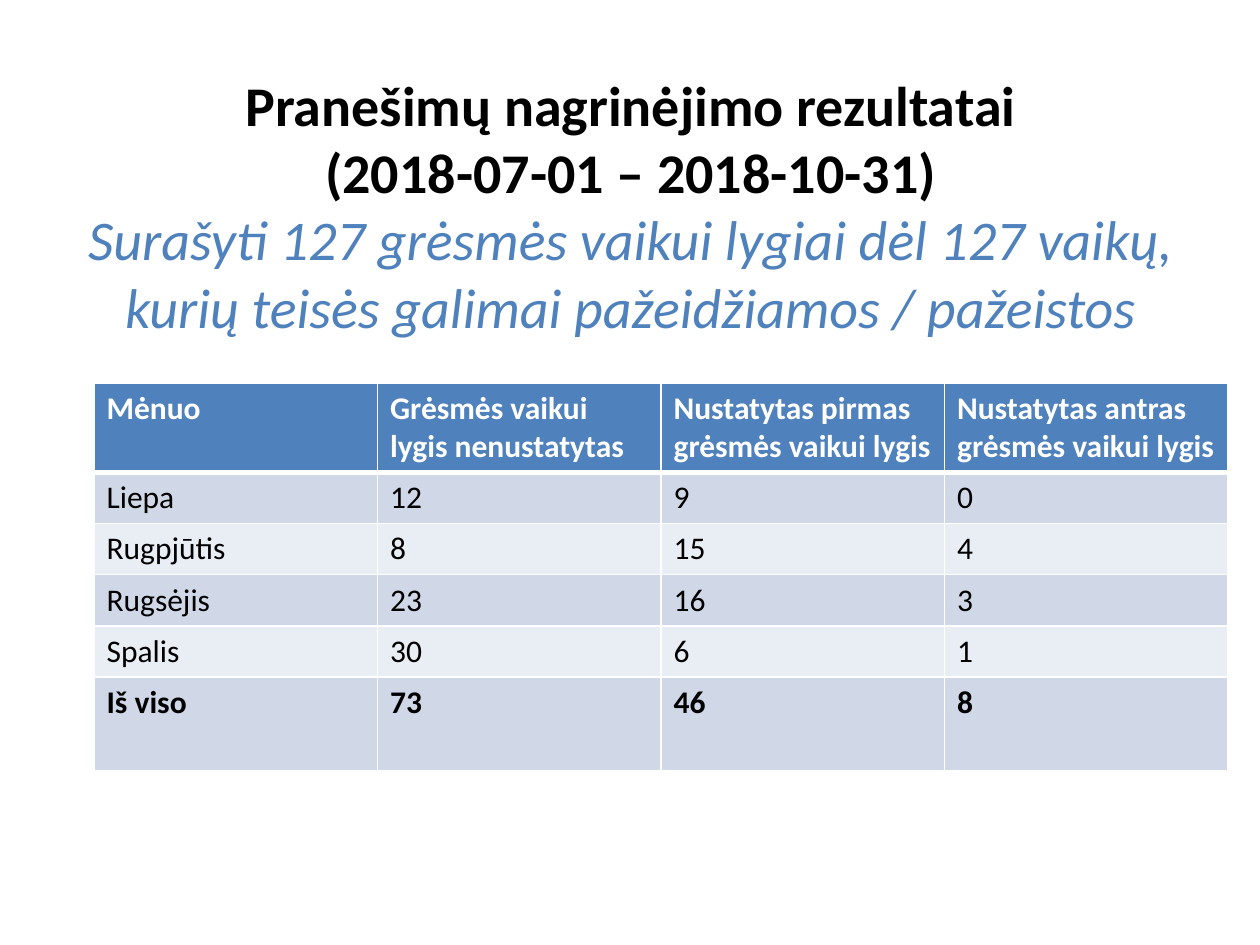
from pptx import Presentation
from pptx.dml.color import RGBColor
from pptx.enum.text import MSO_ANCHOR, MSO_AUTO_SIZE, PP_ALIGN
from pptx.oxml.ns import qn
from pptx.util import Pt
from lxml.etree import SubElement

EMU_PER_PX = 914400 / 126
FONT = "Calibri"
COLORS = {
    "accent": "4F81BD",
    "band_dark": "D0D8E8",
    "band_light": "E9EDF4",
    "text": "000000",
    "white": "FFFFFF",
}
HEADERS = [
    "Mėnuo",
    "Grėsmės vaikui lygis nenustatytas",
    "Nustatytas pirmas grėsmės vaikui lygis",
    "Nustatytas antras grėsmės vaikui lygis",
]
MONTHS = [
    ("Liepa", 12, 9, 0),
    ("Rugpjūtis", 8, 15, 4),
    ("Rugsėjis", 23, 16, 3),
    ("Spalis", 30, 6, 1),
]
TOTALS = ("Iš viso", 73, 46, 8)


def px(length):
    return round(length * EMU_PER_PX)


def color(name):
    return RGBColor.from_string(COLORS[name])


def add_text(paragraph, text, size=18, fill="text", bold=False, italic=False):
    run = paragraph.add_run()
    run.text = text
    font = run.font
    font.name = FONT
    font.size = Pt(size)
    font.bold = bold
    font.italic = italic
    font.color.rgb = color(fill)


def set_borders(cell, top=1, bottom=1):
    properties = cell._tc.get_or_add_tcPr()
    for side, width in (("L", 1), ("R", 1), ("T", top), ("B", bottom)):
        line = SubElement(properties, qn(f"a:ln{side}"), w=str(Pt(width)))
        solid = SubElement(line, qn("a:solidFill"))
        SubElement(solid, qn("a:srgbClr"), val=COLORS["white"])


def place_title(slide, left, top, width, height):
    title = slide.shapes.title
    title.left, title.top, title.width, title.height = map(px, (left, top, width, height))
    frame = title.text_frame
    frame.word_wrap = True
    frame.auto_size = MSO_AUTO_SIZE.NONE
    frame.vertical_anchor = MSO_ANCHOR.MIDDLE
    paragraph = frame.paragraphs[0]
    paragraph.alignment = PP_ALIGN.CENTER
    for line in ("Pranešimų nagrinėjimo rezultatai", "(2018-07-01 – 2018-10-31)"):
        add_text(paragraph, line, size=32, bold=True)
        paragraph.add_line_break()
    add_text(
        paragraph,
        "Surašyti 127 grėsmės vaikui lygiai dėl 127 vaikų, "
        "kurių teisės galimai pažeidžiamos / pažeistos",
        size=32, fill="accent", italic=True,
    )


def place_table(slide, left, top, width, header_height, row_height, total_height):
    rows = [HEADERS, *MONTHS, TOTALS]
    heights = [header_height] + [row_height] * len(MONTHS) + [total_height]
    table = slide.shapes.add_table(
        len(rows), len(HEADERS), px(left), px(top), px(width), px(sum(heights))
    ).table
    for column in table.columns:
        column.width = px(width / len(HEADERS))

    for row_index, (values, height) in enumerate(zip(rows, heights)):
        table.rows[row_index].height = px(height)
        is_header = row_index == 0
        band = "band_dark" if row_index % 2 else "band_light"
        for column_index, value in enumerate(values):
            cell = table.cell(row_index, column_index)
            # The rule under the header is thicker than the others
            set_borders(cell, top=3 if row_index == 1 else 1, bottom=3 if is_header else 1)
            cell.fill.solid()
            cell.fill.fore_color.rgb = color("accent" if is_header else band)
            add_text(
                cell.text_frame.paragraphs[0], str(value),
                fill="white" if is_header else "text",
                bold=is_header or values is TOTALS,
            )


def main():
    presentation = Presentation()
    presentation.slide_width = px(1260)
    presentation.slide_height = px(945)
    slide = presentation.slides.add_slide(presentation.slide_layouts[5])

    # Heading with period and summary
    place_title(slide, 64, 76, 1134, 258)
    # Monthly results
    place_table(slide, 94, 383, 1134, header_height=87, row_height=51, total_height=94)

    presentation.save("out.pptx")


if __name__ == "__main__":
    main()
